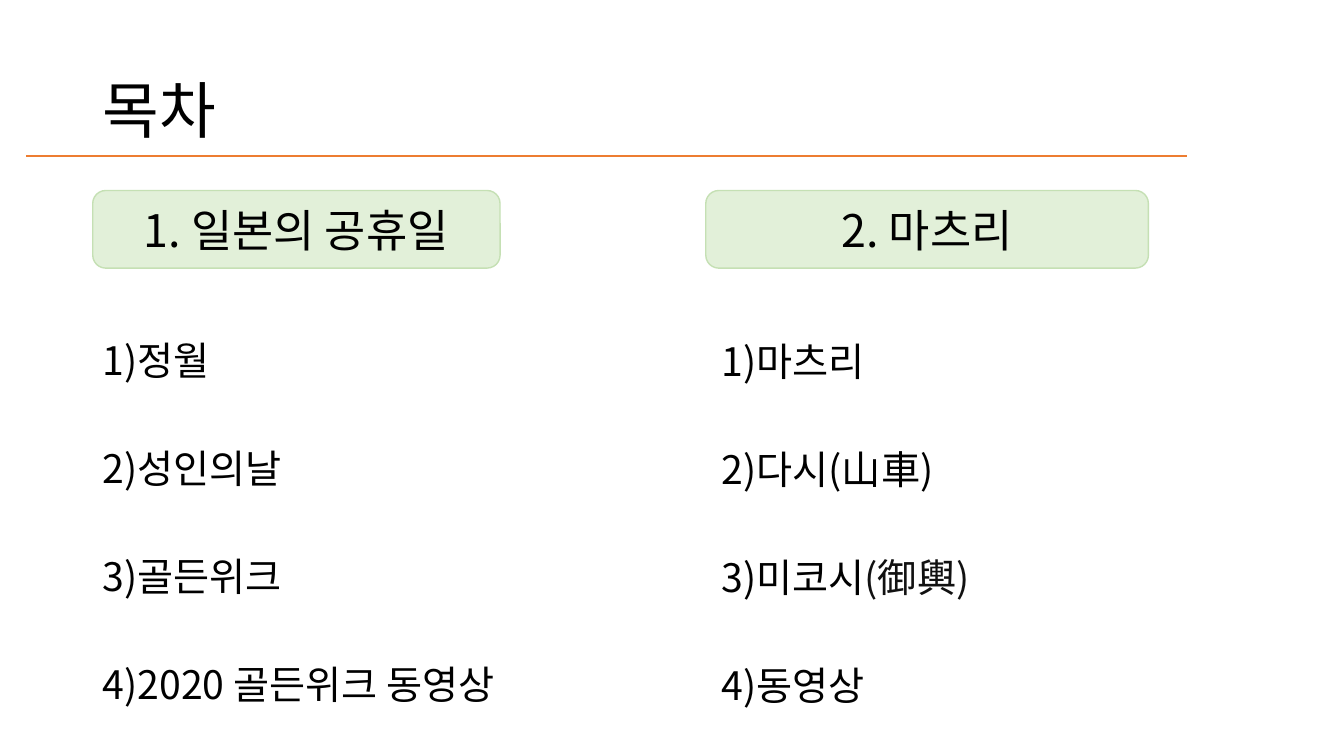
"""Builds a table-of-contents slide with two columns of topics."""
from lxml import etree
from pptx import Presentation
from pptx.dml.color import RGBColor
from pptx.enum import shapes, text
from pptx.oxml import ns
from pptx.util import Inches, Pt

FONT = "Noto Sans CJK KR"
COLORS = {"text": "000000", "kanji": "111111", "fill": "E2F0D9",
          "edge": "C5E0B4", "rule": "ED7D31"}


def color(name):
    return RGBColor.from_string(COLORS[name])


def write(para, words, size, tint="text"):
    run = para.add_run()
    run.text = words
    run.font.size = Pt(size)
    run.font.color.rgb = color(tint)
    run.font.name = FONT
    etree.SubElement(run.font._element, ns.qn("a:ea"), typeface=FONT)


deck = Presentation()
deck.slide_width, deck.slide_height = Inches(13.33), Inches(7.5)
slide = deck.slides.add_slide(deck.slide_layouts[5])

title = slide.shapes.title
title.left, title.top = Inches(0.92), Inches(0.4)
title.width, title.height = Inches(11.5), Inches(1.45)
title.text_frame.vertical_anchor = text.MSO_ANCHOR.MIDDLE
para = title.text_frame.paragraphs[0]
para.alignment = text.PP_ALIGN.LEFT
para.line_spacing = 0.9
write(para, "목차", 44)

columns = [
    ("1. 일본의 공휴일", 0.92, 4.04, 0.92, 2.82, 4.85, 4.3,
     [["1)정월"], ["2)성인의날"], ["3)골든위크"], ["4)2020 골든위크 동영상"]]),
    ("2. 마츠리", 7, 4.39, 7.06, 2.83, 4.71, 4.42,
     [["1)마츠리"], ["2)다시(山車)"], ["3)미코시", "(御輿)"], ["4)동영상"]]),
]
for head, left, width, x, y, w, h, topics in columns:
    label = slide.shapes.add_shape(
        shapes.MSO_SHAPE.ROUNDED_RECTANGLE,
        Inches(left), Inches(1.89), Inches(width), Inches(0.77))
    label.shadow.inherit = False
    label.fill.solid()
    label.fill.fore_color.rgb = color("fill")
    label.line.color.rgb = color("edge")
    label.line.width = Pt(1)
    label.text_frame.vertical_anchor = text.MSO_ANCHOR.MIDDLE
    para = label.text_frame.paragraphs[0]
    para.alignment = text.PP_ALIGN.CENTER
    write(para, head, 32)

    frame = slide.shapes.add_textbox(
        Inches(x), Inches(y), Inches(w), Inches(h)).text_frame
    frame.word_wrap = True
    for i, parts in enumerate(topics):
        para = frame.add_paragraph() if i else frame.paragraphs[0]
        para.line_spacing = 2.0
        para.space_before = Pt(10)
        for part, tint in zip(parts, ("text", "kanji")):
            write(para, part, 28, tint)

rule = slide.shapes.add_connector(
    shapes.MSO_CONNECTOR.STRAIGHT,
    Inches(0.26), Inches(1.55), Inches(11.77), Inches(1.55))
rule.line.color.rgb = color("rule")
rule.line.width = Pt(1.5)
etree.SubElement(rule._element.spPr, ns.qn("a:effectLst"))

deck.save("out.pptx")
